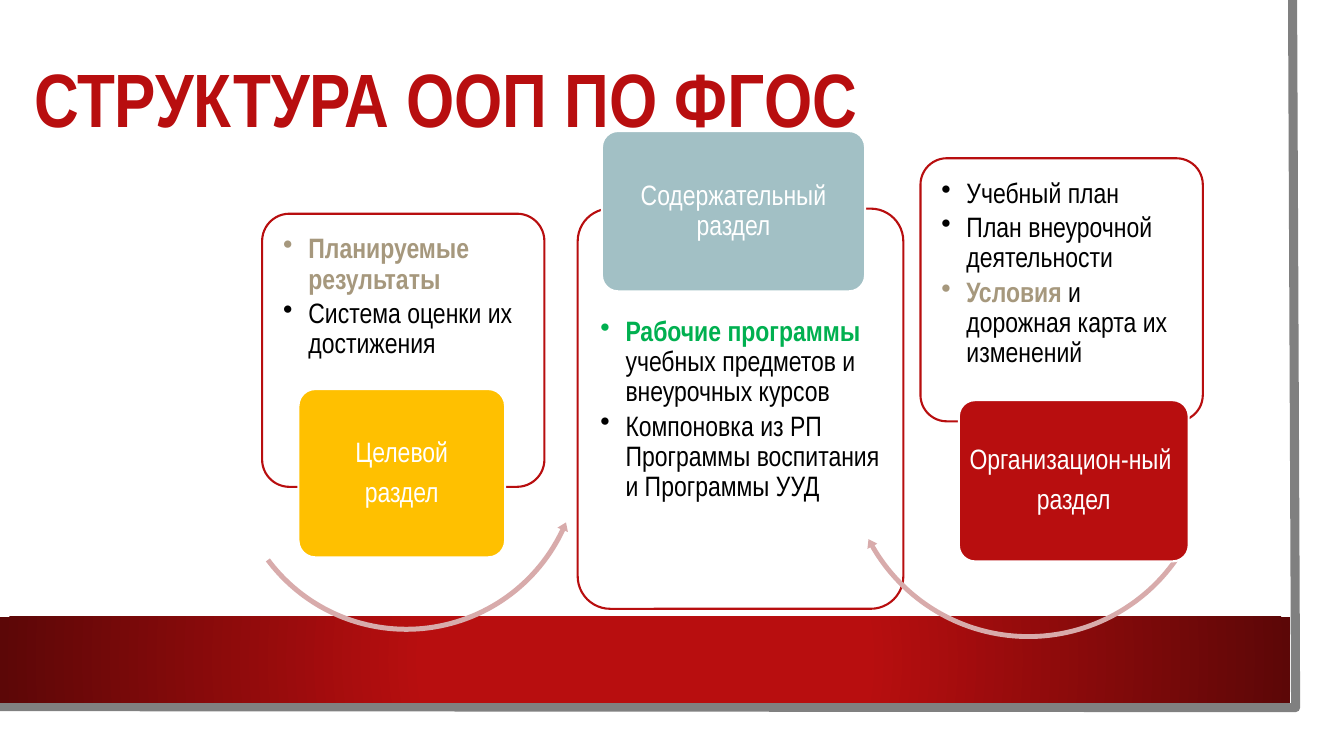
from dataclasses import dataclass

from lxml.etree import SubElement
from pptx import Presentation
from pptx.dml.color import RGBColor
from pptx.enum.shapes import MSO_SHAPE
from pptx.enum.text import MSO_ANCHOR, PP_ALIGN
from pptx.oxml.ns import qn
from pptx.shapes.autoshape import Shape
from pptx.slide import Slide
from pptx.text.text import TextFrame, _Paragraph
from pptx.util import Inches, Pt

FONT = "Arial Narrow"
COLORS = {
    "red": "B80E0F", "dark red": "5C0707", "white": "FFFFFF", "black": "000000",
    "gray": "808080", "sand": "A6987D", "green": "00B050", "yellow": "FFC000",
    "blue": "A2C0C5", "pink": "D8ABAB",
}
Box = tuple[float, float, float, float]


@dataclass
class Bullet:
    """A list item: a bold coloured beginning, then plain text."""
    plain: str = ""
    bold: str = ""
    accent: str = "black"


@dataclass
class Arrow:
    kind: MSO_SHAPE
    box: Box
    adjustments: tuple[float, ...]
    rotation: float = 0


@dataclass
class Section:
    name: str
    name_box: Box
    color: str
    card: Box
    bullets: list[Bullet]
    text_top: float = 0.13
    arrow: Arrow | None = None


SECTIONS = [
    Section(
        "Целевой\nраздел", (2.96, 3.86, 2.05, 1.67), "yellow", (2.6, 2.12, 2.8, 2.71),
        [Bullet(bold="Планируемые результаты", accent="sand"),
         Bullet("Система оценки их достижения")],
        arrow=Arrow(MSO_SHAPE.LEFT_CIRCULAR_ARROW, (2.26, 2.76, 3.54, 3.54),
                    (0.014, 1.616, 15.067, 85.94, 0.016)),
    ),
    Section(
        "Содержательный раздел", (5.97, 1.3, 2.61, 1.59), "blue", (5.73, 2.07, 3.23, 3.97),
        [Bullet("учебных предметов и внеурочных курсов", "Рабочие программы ", "green"),
         Bullet("Компоновка из РП Программы воспитания и Программы УУД")],
        text_top=0.98,
        arrow=Arrow(MSO_SHAPE.CIRCULAR_ARROW, (8.36, 2.69, 3.68, 3.68),
                    (0.013, 1.554, 202.157, 131.222, 0.015), 173.2),
    ),
    Section(
        "Организацион-ный \nраздел", (9.51, 3.97, 2.28, 1.6), "red", (9.13, 1.57, 2.8, 2.61),
        [Bullet("Учебный план"), Bullet("План внеурочной деятельности"),
         Bullet(" и дорожная карта их изменений", "Условия", "sand")],
    ),
]


def rgb(name: str) -> RGBColor:
    return RGBColor.from_string(COLORS[name])


def add_block(slide: Slide, kind: MSO_SHAPE, box: Box, fill: str, line: str = "") -> Shape:
    block = slide.shapes.add_shape(kind, *map(Inches, box))
    block.shadow.inherit = False
    block.fill.solid()
    block.fill.fore_color.rgb = rgb(fill)
    if line:
        block.line.color.rgb = rgb(line)
        block.line.width = Pt(1.5)
    else:
        block.line.fill.background()
    return block


def set_insets(frame: TextFrame, side: float, top: float, bottom: float) -> None:
    frame.word_wrap = True
    frame.margin_left = frame.margin_right = Inches(side)
    frame.margin_top, frame.margin_bottom = Inches(top), Inches(bottom)


def format_runs(paragraph: _Paragraph, size: float, color: str, bold: bool = False) -> None:
    paragraph.line_spacing = 0.9
    for run in paragraph.runs:
        run.font.name, run.font.size, run.font.bold = FONT, Pt(size), bold
        run.font.color.rgb = rgb(color)


def write_bullet(paragraph: _Paragraph, bullet: Bullet) -> None:
    properties = paragraph._p.get_or_add_pPr()
    properties.set("marL", str(Inches(0.25)))
    properties.set("indent", str(-Inches(0.25)))
    SubElement(properties, qn("a:buChar"), char="•")
    paragraph.level = 1
    paragraph.alignment = PP_ALIGN.LEFT
    paragraph.space_after = Pt(3)
    for part in filter(None, (bullet.bold, bullet.plain)):
        paragraph.add_run().text = part
    format_runs(paragraph, 20, "black")
    if bullet.bold:
        opening = paragraph.runs[0].font
        opening.bold = True
        opening.color.rgb = rgb(bullet.accent)


def add_card(slide: Slide, section: Section) -> None:
    card = add_block(slide, MSO_SHAPE.ROUNDED_RECTANGLE, section.card, "white", "red")
    card.adjustments[0] = 0.1
    fill_color = card._element.spPr.find(qn("a:solidFill"))[0]
    SubElement(fill_color, qn("a:alpha"), val="90000")
    frame = card.text_frame
    set_insets(frame, 0.13, section.text_top, 0.13)
    frame.vertical_anchor = MSO_ANCHOR.TOP
    for index, bullet in enumerate(section.bullets):
        write_bullet(frame.add_paragraph() if index else frame.paragraphs[0], bullet)


def add_arrow(slide: Slide, arrow: Arrow) -> None:
    curve = add_block(slide, arrow.kind, arrow.box, "pink")
    for index, value in enumerate(arrow.adjustments):
        curve.adjustments[index] = value
    curve.rotation = arrow.rotation


def add_name(slide: Slide, section: Section) -> None:
    label = add_block(slide, MSO_SHAPE.ROUNDED_RECTANGLE, section.name_box, section.color, "white")
    label.adjustments[0] = 0.1
    frame = label.text_frame
    set_insets(frame, 0.04, 0.03, 0.03)
    frame.vertical_anchor = MSO_ANCHOR.MIDDLE
    frame.text = section.name
    for paragraph in frame.paragraphs:
        paragraph.alignment = PP_ALIGN.CENTER
        paragraph.space_after = Pt(7)
        format_runs(paragraph, 20, "white")


def add_background(slide: Slide) -> None:
    # White sheet with a gray edge on the right and at the bottom
    add_block(slide, MSO_SHAPE.RECTANGLE, (0, 0, 13.1, 7.27), "white")
    outline = slide.shapes.build_freeform(Inches(12.82), 0)
    outline.add_line_segments(
        [(Inches(12.85), Inches(7.02)), (Inches(-0.03), Inches(7.01))], close=False)
    edge = outline.convert_to_shape()
    edge.shadow.inherit = False
    edge.fill.background()
    edge.line.color.rgb = rgb("gray")
    edge.line.width = Pt(6.5)

    # Red band, darker towards its ends
    band = add_block(slide, MSO_SHAPE.RECTANGLE, (0, 6.12, 12.8, 0.85), "red")
    band.fill.gradient()
    for stop, (position, color) in zip(band.fill.gradient_stops, ((0.34, "red"), (1, "dark red"))):
        stop.position = position
        stop.color.rgb = rgb(color)
    gradient = band._element.spPr.find(qn("a:gradFill"))
    gradient.remove(gradient.find(qn("a:lin")))
    circle = SubElement(gradient, qn("a:path"), path="circle")
    SubElement(circle, qn("a:fillToRect"), l="50000", t="50000", r="50000", b="50000")


def set_title(slide: Slide) -> None:
    title = slide.shapes.title
    slide.shapes._spTree.append(title._element)  # in front of the sheet
    title.left, title.top, title.width, title.height = map(Inches, (0.24, 0.39, 11.37, 1.26))
    title.text_frame.text = "СТРУКТУРА ООП ПО ФГОС"
    title.text_frame.vertical_anchor = MSO_ANCHOR.MIDDLE
    heading = title.text_frame.paragraphs[0]
    heading.alignment = PP_ALIGN.LEFT
    format_runs(heading, 54, "red", bold=True)


def main() -> None:
    deck = Presentation()
    deck.slide_width, deck.slide_height = Inches(13.33), Inches(7.5)
    slide = deck.slides.add_slide(deck.slide_layouts[5])
    add_background(slide)
    set_title(slide)
    for section in SECTIONS:
        add_card(slide, section)
        if section.arrow:
            add_arrow(slide, section.arrow)
        add_name(slide, section)
    deck.save("out.pptx")


if __name__ == "__main__":
    main()
